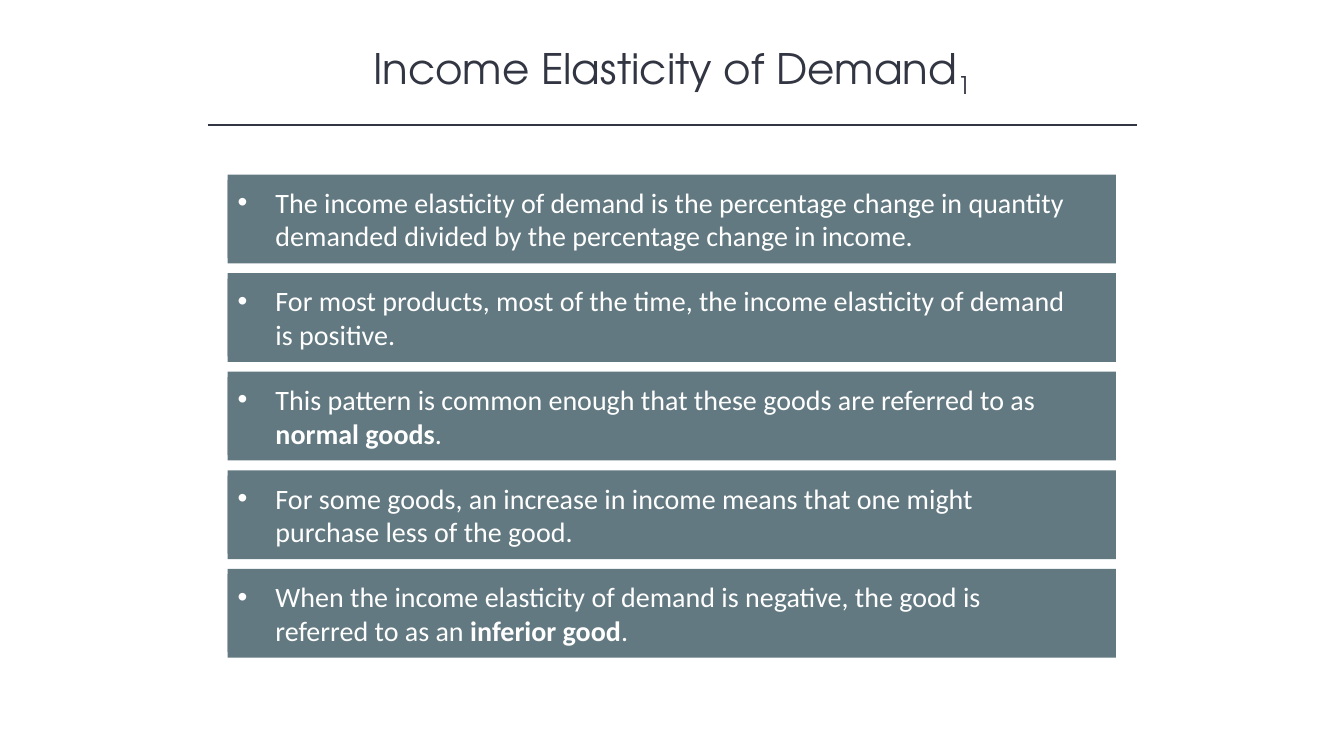
from lxml import etree
from pptx import Presentation
from pptx.dml.color import RGBColor
from pptx.enum.shapes import MSO_CONNECTOR, MSO_SHAPE
from pptx.enum.text import MSO_ANCHOR, MSO_AUTO_SIZE, PP_ALIGN
from pptx.oxml.ns import qn
from pptx.util import Pt

RECTANGLE = MSO_SHAPE.RECTANGLE
STRAIGHT = MSO_CONNECTOR.STRAIGHT
TOP, MIDDLE = MSO_ANCHOR.TOP, MSO_ANCHOR.MIDDLE
GROW = MSO_AUTO_SIZE.SHAPE_TO_FIT_TEXT
CENTER = PP_ALIGN.CENTER

COLORS = {"ink": "323542", "bar": "627981", "white": "FFFFFF"}
TITLE_FONT, BODY_FONT = "TeX Gyre Adventor", "Calibri"

BAR_LEFT, BAR_TOP = 162.7, 124.7
BAR_WIDTH, BAR_HEIGHT, BAR_PITCH = 634.4, 63.4, 70.4
TEXT_WIDTH, TEXT_HEIGHT = 614.9, 55.7
BULLET_INDENT = 27

# Each statement is a list of (text, bold) runs.
STATEMENTS = [
    [("The income elasticity of demand is the percentage change in quantity "
      "demanded divided by the percentage change in income.", False)],
    [("For most products, most of the time, the income elasticity of demand "
      "is positive.", False)],
    [("This pattern is common enough that these goods are referred to as ", False),
     ("normal goods", True), (".", False)],
    [("For some goods, an increase in income means that one might purchase "
      "less of the good.", False)],
    [("When the income elasticity of demand is negative, the good is referred "
      "to as an ", False), ("inferior good", True), (".", False)],
]


def color(name):
    return RGBColor.from_string(COLORS[name])


def add_run(paragraph, text, font_name, size, color_name, bold=False):
    run = paragraph.add_run()
    run.text = text
    run.font.name = font_name
    run.font.size = Pt(size)
    run.font.bold = bold
    run.font.color.rgb = color(color_name)
    return run


def set_title(slide):
    title = slide.shapes.title
    title.left, title.top = Pt(120), Pt(26.6)
    title.width, title.height = Pt(720), Pt(43.9)
    frame = title.text_frame
    frame.word_wrap = True
    frame.auto_size = GROW
    frame.vertical_anchor = TOP
    paragraph = frame.paragraphs[0]
    paragraph.alignment = CENTER
    add_run(paragraph, "Income Elasticity of Demand", TITLE_FONT, 30, "ink")
    subscript = add_run(paragraph, "1", TITLE_FONT, 30, "ink")
    subscript.font._element.set("baseline", "-25000")


def add_title_rule(slide):
    rule = slide.shapes.add_connector(STRAIGHT, Pt(148.3), Pt(89.3), Pt(812.2), Pt(89.3))
    rule.line.color.rgb = color("ink")
    rule.line.width = Pt(1)
    etree.SubElement(rule._element.spPr, qn("a:effectLst"))


def add_bar(group, top, width, height):
    bar = group.shapes.add_shape(RECTANGLE, Pt(BAR_LEFT), Pt(top), Pt(width), Pt(height))
    bar.shadow.inherit = False
    bar.fill.solid()
    bar.fill.fore_color.rgb = color("bar")
    bar.line.fill.background()
    return bar


def set_bullet(paragraph):
    properties = paragraph._p.get_or_add_pPr()
    properties.set("marL", str(Pt(BULLET_INDENT)))
    properties.set("indent", str(-Pt(BULLET_INDENT)))
    properties.set("algn", "l")
    etree.SubElement(properties, qn("a:buFont"), typeface="Arial")
    etree.SubElement(properties, qn("a:buChar"), char="•")


def add_statement(slide, top, runs):
    """Group a full-width bar with the narrower block that holds its text."""
    group = slide.shapes.add_group_shape()
    add_bar(group, top, BAR_WIDTH, BAR_HEIGHT)
    text_top = top + (BAR_HEIGHT - TEXT_HEIGHT) / 2
    block = add_bar(group, text_top, TEXT_WIDTH, TEXT_HEIGHT)
    frame = block.text_frame
    frame.word_wrap = True
    frame.auto_size = GROW
    frame.vertical_anchor = MIDDLE
    paragraph = frame.paragraphs[0]
    set_bullet(paragraph)
    paragraph.font.size = Pt(20)
    paragraph.font.color.rgb = color("white")
    for text, bold in runs:
        add_run(paragraph, text, BODY_FONT, 20, "white", bold)


def main():
    presentation = Presentation()
    presentation.slide_width, presentation.slide_height = Pt(960), Pt(540)
    slide = presentation.slides.add_slide(presentation.slide_layouts[5])
    set_title(slide)
    add_title_rule(slide)
    for index, runs in enumerate(STATEMENTS):
        add_statement(slide, BAR_TOP + index * BAR_PITCH, runs)
    presentation.save("out.pptx")


if __name__ == "__main__":
    main()
